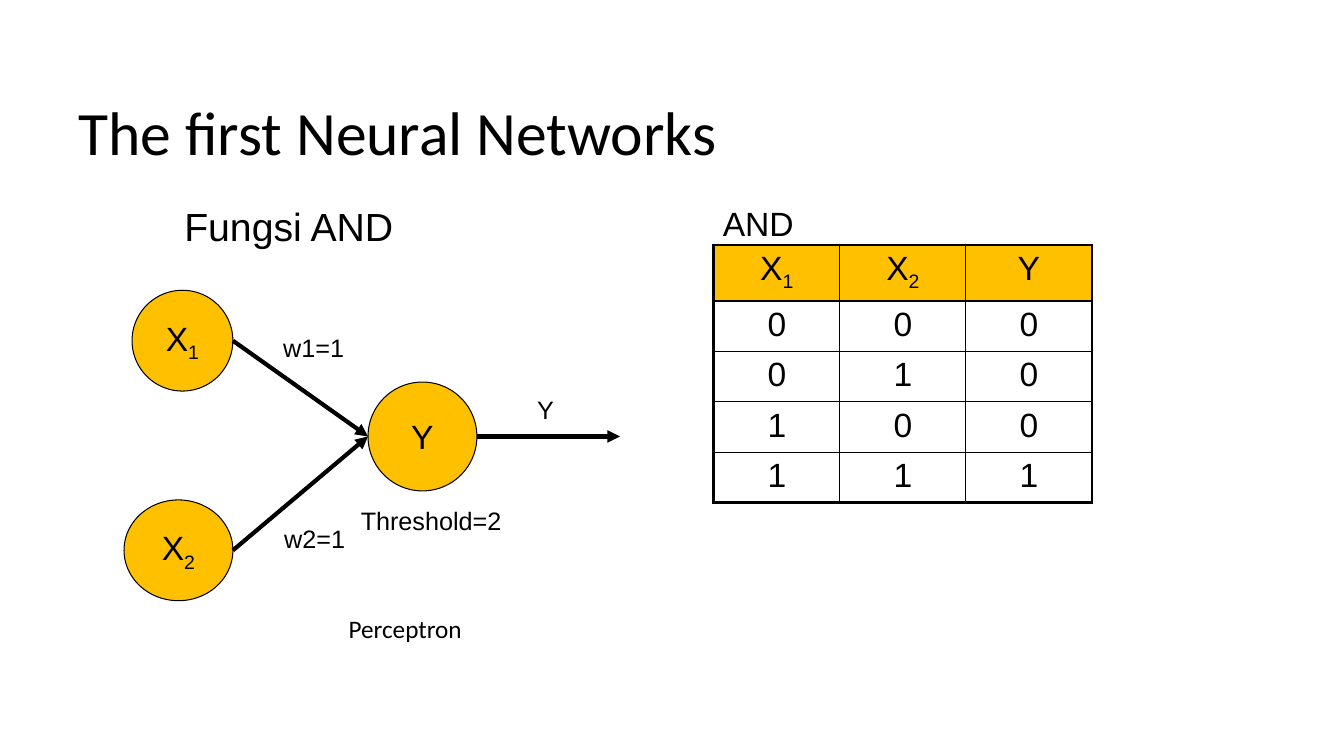
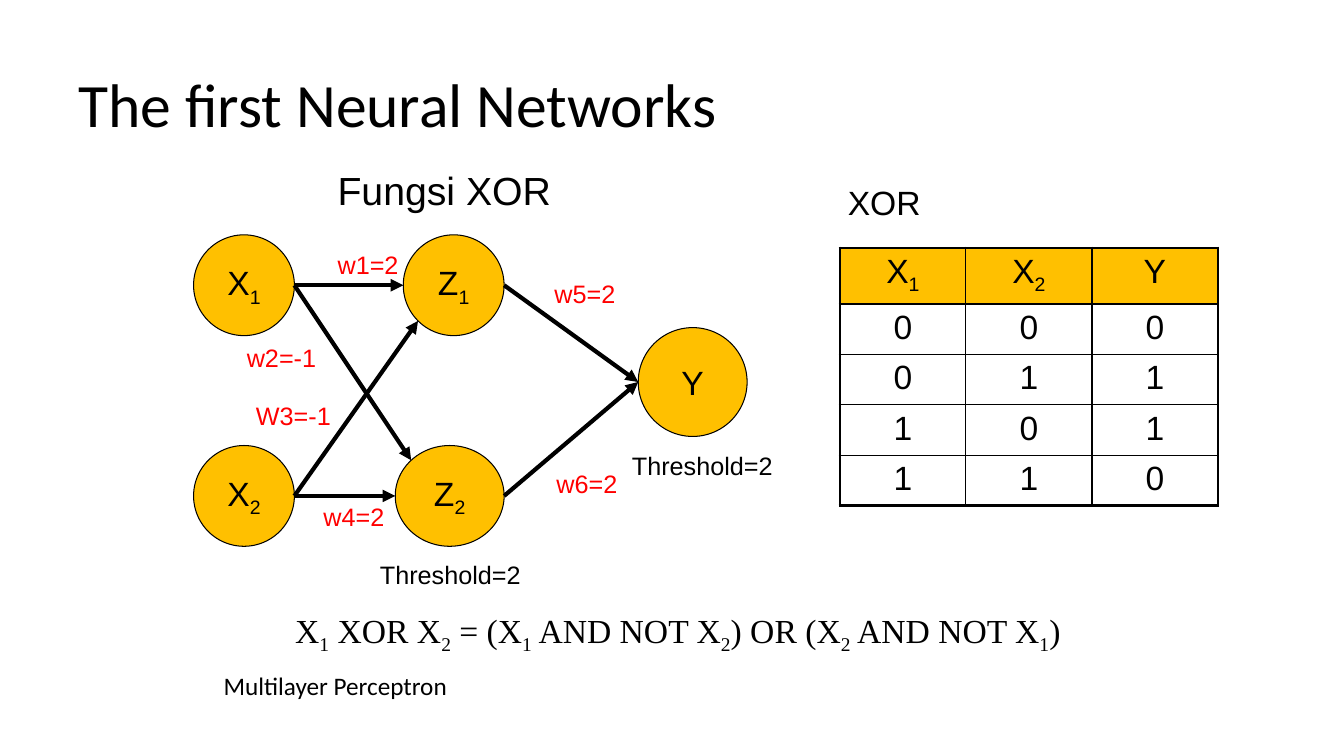
"""Build two slides on the first neural networks: AND perceptron and XOR multilayer perceptron."""
from math import cos, radians, sin

from lxml import etree
from pptx import Presentation
from pptx.dml.color import RGBColor
from pptx.enum.shapes import MSO_CONNECTOR, MSO_SHAPE
from pptx.enum.text import MSO_ANCHOR, MSO_AUTO_SIZE, PP_ALIGN
from pptx.oxml.ns import qn
from pptx.util import Inches, Pt

STRAIGHT = MSO_CONNECTOR.STRAIGHT
OVAL = MSO_SHAPE.OVAL
MIDDLE = MSO_ANCHOR.MIDDLE
FIT_SHAPE = MSO_AUTO_SIZE.SHAPE_TO_FIT_TEXT
LEFT, CENTER = PP_ALIGN.LEFT, PP_ALIGN.CENTER

COLORS = {"ink": "000000", "amber": "FFC000", "weight": "FF0000"}
TITLE = "The first Neural Networks"
COLUMN_WIDTH, ROW_HEIGHT = 1.25, 0.48
THIN, THICK = 1, 2.25

SLIDES = [
    {
        "title_top": 0.72,
        "nodes": {
            "X_1": (1.31, 2.88, 1, 1),
            "X_2": (1.23, 4.96, 1.08, 1),
            "Y": (3.65, 3.79, 1.08, 1.08),
        },
        "links": [("X_1", "Y", 0), ("X_2", "Y", 0)],
        "output_length": 1.42,
        "labels": [
            ("w1=1", 2.71, 3.25, 0.81, 0.4, {}),
            ("w2=1", 2.72, 5.14, 0.81, 0.4, {}),
            ("Threshold=2", 3.48, 4.96, 1.6, 0.4, {}),
            ("Y", 5.23, 3.86, 0.37, 0.4, {}),
            ("Fungsi AND", 1.73, 1.96, 2.3, 0.57, {"size": 28}),
            ("AND", 7.07, 1.96, 0.91, 0.5, {"size": 24}),
            ("Perceptron", 3.36, 6.04, 1.34, 0.4, {"font": "Calibri"}),
        ],
        "table_at": (7.08, 2.43),
        "outputs": "0001",
    },
    {
        "title_top": 0.44,
        "nodes": {
            "X_1": (1.92, 2.33, 1, 1),
            "X_2": (1.92, 4.42, 1, 1),
            "Z_1": (4, 2.33, 1, 1),
            "Z_2": (3.92, 4.42, 1.08, 1),
            "Y": (6.33, 3.25, 1.08, 1.08),
        },
        "links": [
            ("X_1", "Z_1", 0),
            ("X_2", "Z_2", 0),
            ("X_1", "Z_2", -45),
            ("X_2", "Z_1", 45),
            ("Z_1", "Y", 0),
            ("Z_2", "Y", 0),
        ],
        "output_length": 0,
        "labels": [
            ("w1=2", 3.25, 2.42, 0.81, 0.4, {"color": "weight"}),
            ("w2=-1", 2.35, 3.35, 0.9, 0.4, {"color": "weight"}),
            ("W3=-1", 2.44, 3.92, 0.95, 0.4, {"color": "weight"}),
            ("w4=2", 3.11, 4.92, 0.81, 0.4, {"color": "weight"}),
            ("w5=2", 5.4, 2.71, 0.81, 0.4, {"color": "weight"}),
            ("w6=2", 5.42, 4.6, 0.81, 0.4, {"color": "weight"}),
            ("Threshold=2", 6.17, 4.42, 1.6, 0.4, {}),
            ("Threshold=2", 3.67, 5.5, 1.6, 0.4, {}),
            ("Fungsi XOR", 3.25, 1.6, 2.32, 0.57, {"size": 28}),
            ("XOR", 8.31, 1.76, 0.92, 0.5, {"size": 24}),
            ("X_1 XOR X_2 = (X_1 AND NOT X_2) OR (X_2 AND NOT X_1)",
             2.83, 6, 7.94, 0.5, {"size": 24, "font": "Times New Roman"}),
            ("Multilayer Perceptron", 2.12, 6.6, 2.44, 0.4, {"font": "Calibri"}),
        ],
        "table_at": (8.33, 2.46),
        "outputs": "0110",
    },
]


def write(frame, text, size=18, font="Arial", color="ink", align=LEFT):
    """Write text in which an underscore makes the next character a subscript."""
    paragraph = frame.paragraphs[0]
    paragraph.alignment = align
    first, *others = text.split("_")
    pieces = [(first, False)]
    for other in others:
        pieces += [(other[0], True), (other[1:], False)]
    for piece, lowered in pieces:
        if piece:
            run = paragraph.add_run()
            run.text = piece
            run.font.size = Pt(size)
            run.font.name = font
            run.font.color.rgb = RGBColor.from_string(COLORS[color])
            if lowered:
                run.font._element.set("baseline", "-25000")
    return paragraph


def add_line(parent, tag, **attributes):
    """Append a DrawingML element to a parent."""
    return etree.SubElement(parent, qn(tag), attributes)


prs = Presentation()
prs.slide_width, prs.slide_height = Inches(13.33), Inches(7.5)

for content in SLIDES:
    slide = prs.slides.add_slide(prs.slide_layouts[6])

    title = slide.shapes.add_textbox(
        Inches(0.68), Inches(content["title_top"]), Inches(12), Inches(1.25)).text_frame
    title.word_wrap = True
    title.vertical_anchor = MIDDLE
    write(title, TITLE, size=44, font="Calibri").line_spacing = 0.9

    nodes = content["nodes"]
    for name, box in nodes.items():
        neuron = slide.shapes.add_shape(OVAL, *map(Inches, box))
        neuron.shadow.inherit = False
        neuron.fill.solid()
        neuron.fill.fore_color.rgb = RGBColor.from_string(COLORS["amber"])
        neuron.line.color.rgb = RGBColor.from_string(COLORS["ink"])
        neuron.line.width = Pt(0.75)
        neuron.text_frame.word_wrap = False
        neuron.text_frame.vertical_anchor = MIDDLE
        write(neuron.text_frame, name, size=24, align=CENTER)

    arrows = []
    for source, target, angle in content["links"]:
        left, top, width, height = nodes[source]
        to_left, to_top, to_width, to_height = nodes[target]
        arrows.append((
            left + width, top + height / 2,
            to_left + to_width / 2 * (1 - cos(radians(angle))),
            to_top + to_height / 2 * (1 + sin(radians(angle)))))
    if content["output_length"]:
        left, top, width, height = nodes["Y"]
        start, middle = left + width, top + height / 2
        arrows.append((start, middle, start + content["output_length"], middle))
    for ends in arrows:
        arrow = slide.shapes.add_connector(STRAIGHT, *map(Inches, ends))
        arrow.line.color.rgb = RGBColor.from_string(COLORS["ink"])
        arrow.line.width = Pt(3)
        add_line(arrow.line._get_or_add_ln(), "a:tailEnd", type="triangle")
        add_line(arrow._element.spPr, "a:effectLst")

    for text, left, top, width, height, style in content["labels"]:
        label = slide.shapes.add_textbox(*map(Inches, (left, top, width, height))).text_frame
        label.word_wrap = False
        label.auto_size = FIT_SHAPE
        write(label, text, **style)

    rows = [("X_1", "X_2", "Y")]
    rows += [(*inputs, output) for inputs, output in zip(("00", "01", "10", "11"), content["outputs"])]
    last_row, last_column = len(rows) - 1, len(rows[0]) - 1
    left, top = content["table_at"]
    truth_table = slide.shapes.add_table(
        len(rows), len(rows[0]), Inches(left), Inches(top),
        Inches(COLUMN_WIDTH * len(rows[0])), Inches(ROW_HEIGHT * len(rows))).table
    truth_table.first_row = truth_table.horz_banding = False
    for r, values in enumerate(rows):
        truth_table.rows[r].height = Inches(ROW_HEIGHT)
        for c, value in enumerate(values):
            cell = truth_table.cell(r, c)
            write(cell.text_frame, value, size=24, align=CENTER)
            outer_edges = {"L": c == 0, "R": c == last_column, "T": r == 0, "B": r == last_row}
            for side, outer in outer_edges.items():
                border = add_line(cell._tc.get_or_add_tcPr(), f"a:ln{side}",
                                  w=str(Pt(THICK if outer else THIN)))
                add_line(add_line(border, "a:solidFill"), "a:srgbClr", val=COLORS["ink"])
            if r == 0:
                cell.fill.solid()
                cell.fill.fore_color.rgb = RGBColor.from_string(COLORS["amber"])
            else:
                cell.fill.background()

prs.save("out.pptx")
